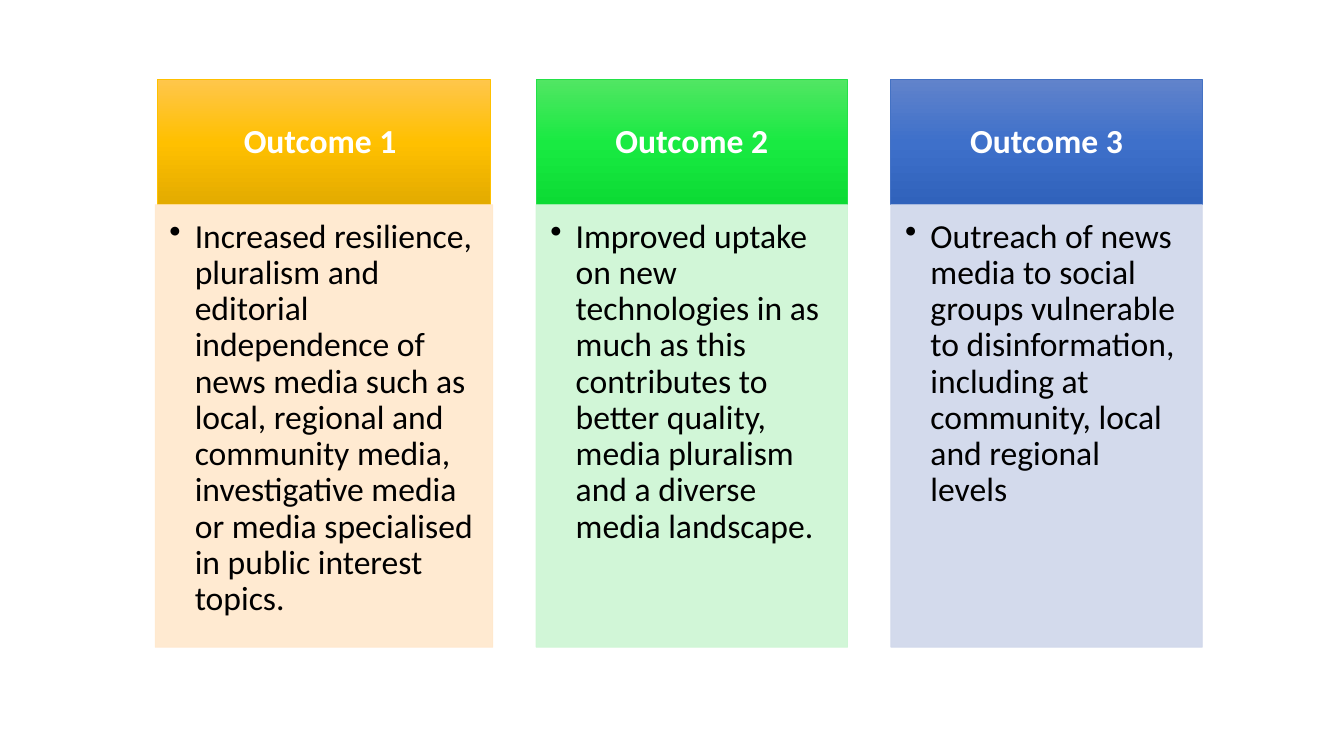
"""Build a slide with three project outcomes as header-and-text columns."""
import copy

import pptx
import pptx.dml.color
import pptx.enum.shapes
import pptx.enum.text
import pptx.oxml
import pptx.oxml.ns
import pptx.util
from pptx.util import Cm

OUTCOMES = [
    {"head": "Outcome 1 ", "width": 8.51, "head_inset": 0.05, "color": "amber",
     "body": "Increased resilience, pluralism and editorial independence of news media "
             "such as local, regional and community media, investigative media or media "
             "specialised in public interest topics."},
    {"head": "Outcome 2", "width": 7.85, "head_inset": 0, "color": "green",
     "body": "Improved uptake on new technologies in as much as this contributes to "
             "better quality, media pluralism and a diverse media landscape."},
    {"head": "Outcome 3", "width": 7.85, "head_inset": 0, "color": "blue",
     "body": "Outreach of news media to social groups vulnerable to disinformation,\n"
             "including at community, local and regional levels"},
]
COLORS = {
    "amber": {"grad": ("FFC64B", "FFC000", "E3AB00"), "line": "FFC000", "body": "FFE8CC"},
    "green": {"grad": ("51E663", "19EA42", "0CDB34"), "line": "23E148", "body": "CCF6D3"},
    "blue": {"grad": ("6183CB", "3E70CA", "3062BB"), "line": "4472C4", "body": "CFD6EA"},
    "head_text": "FFFFFF",
    "body_text": "000000",
}
LEFT, TOP, GAP = 3.91, 2.01, 1.09
HEAD_HEIGHT, BODY_HEIGHT = 3.15, 11.15
HEAD_MARGINS = (0.48, 0.28, 0.48, 0.28)
BODY_MARGINS = (0.36, 0.36, 0.48, 0.53)
BODY_ALPHA = 90
INDENT = Cm(0.64)


def rgb(color):
    return pptx.dml.color.RGBColor.from_string(color)


def add_box(slide, box, text, margins, line_color, text_color):
    sp = slide.shapes.add_shape(pptx.enum.shapes.MSO_SHAPE.RECTANGLE, *map(Cm, box))
    sp.shadow.inherit = False
    sp.line.color.rgb = rgb(line_color)
    sp.line.width = pptx.util.Pt(0.5)
    tf = sp.text_frame
    tf.word_wrap = True
    tf.margin_left, tf.margin_top, tf.margin_right, tf.margin_bottom = map(Cm, margins)
    p = tf.paragraphs[0]
    p.text = text
    p.line_spacing = 0.9
    for r in p.runs:
        r.font.name = "Calibri"
        r.font.size = pptx.util.Pt(24)
        r.font.color.rgb = rgb(text_color)
    return sp


def fill_gradient(sp, colors):
    sp.fill.gradient()
    sp.fill.gradient_angle = 270
    gs_list = sp.fill.gradient_stops[0]._gs.getparent()
    gs_list.append(copy.deepcopy(gs_list[-1]))
    stops = sp.fill.gradient_stops
    for i, (stop, color) in enumerate(zip(stops, colors)):
        stop.color.rgb = rgb(color)
        stop.position = i / (len(colors) - 1)


def add_head(slide, box, text, colors):
    sp = add_box(slide, box, text, HEAD_MARGINS, colors["line"], COLORS["head_text"])
    fill_gradient(sp, colors["grad"])
    sp.text_frame.vertical_anchor = pptx.enum.text.MSO_ANCHOR.MIDDLE
    p = sp.text_frame.paragraphs[0]
    p.alignment = pptx.enum.text.PP_ALIGN.CENTER
    p.font.bold = True
    for r in p.runs:
        r.font.bold = True


def add_body(slide, box, text, colors):
    sp = add_box(slide, box, text, BODY_MARGINS, colors["body"], COLORS["body_text"])
    sp.fill.solid()
    sp.fill.fore_color.rgb = rgb(colors["body"])
    for clr in sp._element.spPr.iter(pptx.oxml.ns.qn("a:srgbClr")):
        alpha = pptx.oxml.xmlchemy.OxmlElement("a:alpha")
        alpha.set("val", str(BODY_ALPHA * 1000))
        clr.append(alpha)
    sp.text_frame.vertical_anchor = pptx.enum.text.MSO_ANCHOR.TOP
    p = sp.text_frame.paragraphs[0]
    p.alignment = pptx.enum.text.PP_ALIGN.LEFT
    p.level = 1
    p_pr = p._p.get_or_add_pPr()
    p_pr.set("marL", str(INDENT))
    p_pr.set("indent", str(-INDENT))
    bullet = pptx.oxml.xmlchemy.OxmlElement("a:buChar")
    bullet.set("char", "•")
    p_pr.append(bullet)


def main():
    prs = pptx.Presentation()
    prs.slide_width, prs.slide_height = Cm(33.87), Cm(19.05)
    slide = prs.slides.add_slide(prs.slide_layouts[6])
    x = LEFT
    for outcome in OUTCOMES:
        width, inset = outcome["width"], outcome["head_inset"]
        colors = COLORS[outcome["color"]]
        head_box = (x + inset, TOP, width - 2 * inset, HEAD_HEIGHT)
        body_box = (x, TOP + HEAD_HEIGHT, width, BODY_HEIGHT)
        add_head(slide, head_box, outcome["head"], colors)
        add_body(slide, body_box, outcome["body"], colors)
        x += width + GAP
    prs.save("out.pptx")


if __name__ == "__main__":
    main()
